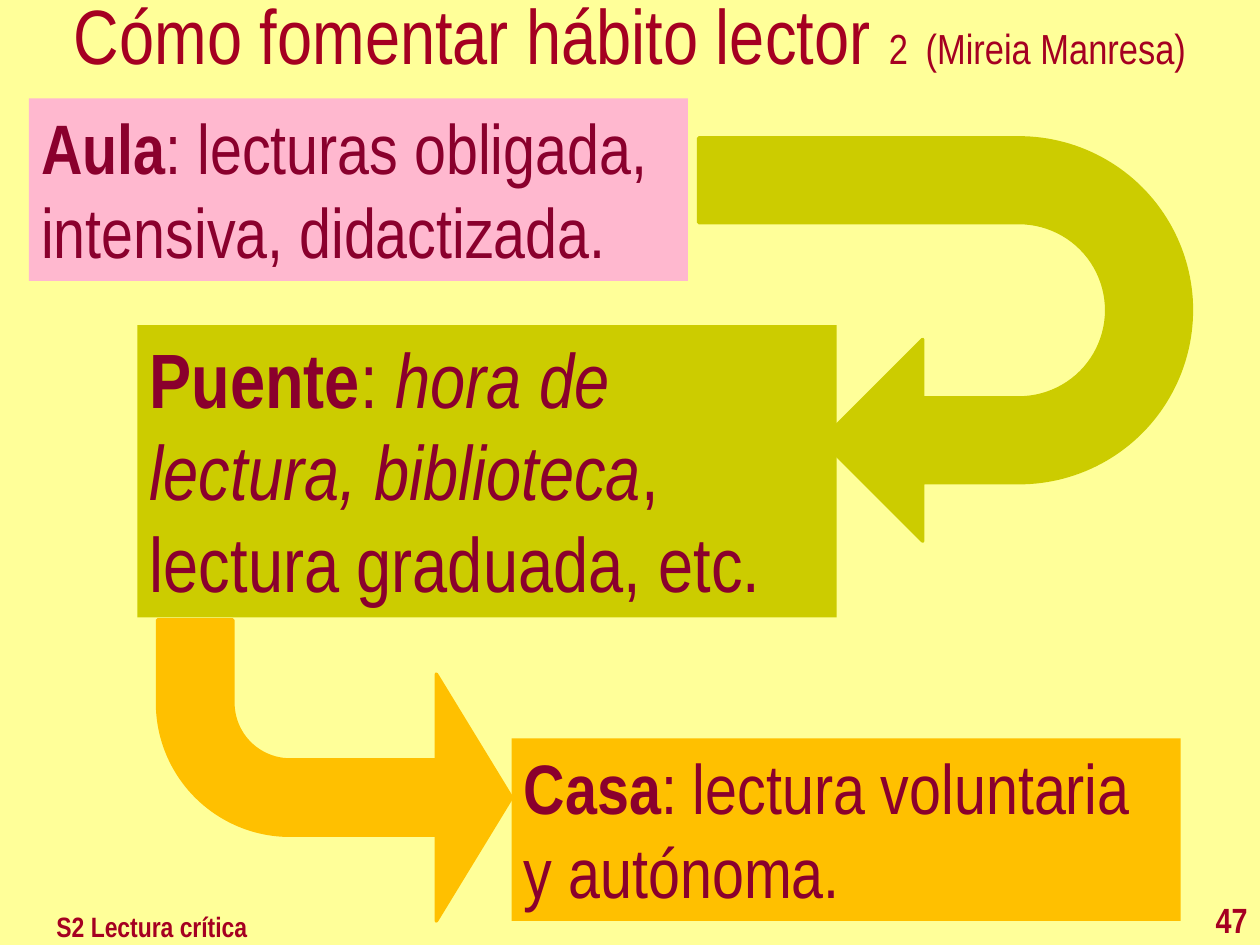
from dataclasses import dataclass

from pptx import Presentation
from pptx import util as u
from pptx.dml.color import RGBColor
from pptx.enum import shapes, text

COLS, ROWS = 100, 75  # grid over a 10 x 7.5 inch slide


@dataclass(frozen=True)
class Theme:
    font: str = "Arial Narrow"
    back: str = "FFFF99"
    head: str = "A50021"
    body: str = "8A002D"
    pink: str = "FFB8CF"
    lime: str = "CCCC00"
    gold: str = "FFC000"
    big: int = 44
    mid: int = 40
    sub: int = 24
    page: int = 20
    foot: int = 16
    edge: int = 2


T = Theme()
KIND = shapes.MSO_SHAPE
SIDE = text.PP_ALIGN


def cell(deck, col, row, wide, high):
    """Turn grid columns and rows into left, top, width, height."""
    dx, dy = deck.slide_width / COLS, deck.slide_height / ROWS
    return [u.Emu(round(n)) for n in (col * dx, row * dy, wide * dx, high * dy)]


def paint(fill, hue):
    fill.solid()
    fill.fore_color.rgb = RGBColor.from_string(hue)


def write(frame, runs, hue, side=SIDE.LEFT, anchor=text.MSO_ANCHOR.TOP,
          fit=text.MSO_AUTO_SIZE.NONE):
    """Fill one paragraph from (words, size, styles) runs."""
    frame.word_wrap = True
    frame.auto_size = fit
    frame.vertical_anchor = anchor
    para = frame.paragraphs[0]
    para.alignment = side
    for words, size, style in runs:
        run = para.add_run()
        run.text = words
        font = run.font
        font.name, font.size = T.font, u.Pt(size)
        font.bold, font.italic = "b" in style, "i" in style
        font.color.rgb = RGBColor.from_string(hue)
    return para


def title(slide, box, runs):
    head = slide.shapes.title
    head.left, head.top, head.width, head.height = box
    para = write(head.text_frame, runs, T.head, SIDE.CENTER,
                 text.MSO_ANCHOR.MIDDLE)
    para.line_spacing = 0.8


def label(slide, box, words, size, side=SIDE.LEFT):
    note = slide.shapes.add_textbox(*box)
    write(note.text_frame, [(words, size, "b")], T.head, side)


def form(slide, kind, box, hue):
    item = slide.shapes.add_shape(kind, *box)
    item.shadow.inherit = False
    paint(item.fill, hue)
    return item


def panel(slide, box, hue, runs):
    item = form(slide, KIND.RECTANGLE, box, hue)
    item.line.fill.background()
    write(item.text_frame, runs, T.body, fit=text.MSO_AUTO_SIZE.SHAPE_TO_FIT_TEXT)


def arrow(slide, kind, box, hue, turn, bends, flip=False):
    item = form(slide, kind, box, hue)
    paint(item.line.fill, hue)
    item.line.width = u.Pt(T.edge)
    item.rotation = turn
    for i, bend in enumerate(bends):
        item.adjustments[i] = bend
    if flip:
        item._element.spPr.find(".//{*}xfrm").set("flipH", "1")


def main():
    deck = Presentation()
    deck.slide_width, deck.slide_height = u.Inches(10), u.Inches(7.5)
    slide = deck.slides.add_slide(deck.slide_layouts[5])
    paint(slide.background.fill, T.back)

    # Title, footer and page number
    title(slide, cell(deck, 0, 0, 100, 6.7), [
        ("Cómo fomentar hábito lector ", T.big, ""), ("2", T.sub, ""),
        (" ", T.big, ""), ("(Mireia Manresa)", T.sub, "")])
    label(slide, cell(deck, 3.5, 71.7, 60.6, 3.3), "S2 Lectura crítica", T.foot)
    label(slide, cell(deck, 92.5, 70.8, 7.5, 4.2), "47", T.page, SIDE.RIGHT)

    # Three reading places
    panel(slide, cell(deck, 2.3, 7.8, 52.3, 14.5), T.pink, [
        ("Aula", T.mid, "b"),
        (": lecturas obligada, intensiva, didactizada.", T.mid, "")])
    panel(slide, cell(deck, 40.6, 58.6, 53.1, 14.5), T.gold, [
        ("Casa", T.mid, "b"),
        (": lectura voluntaria y autónoma.", T.mid, "")])
    panel(slide, cell(deck, 10.9, 25.8, 55.5, 23.2), T.lime, [
        ("Puente", T.big, "b"), (": ", T.big, ""),
        ("hora de lectura, biblioteca", T.big, "i"),
        (", lectura graduada, etc.", T.big, "")])

    # Arrows from one place to the next
    arrow(slide, KIND.U_TURN_ARROW, cell(deck, 59, 7.4, 32, 39.1), T.lime,
          90, (0.21, 0.25, 0.25, 0.44, 0.75))
    arrow(slide, KIND.BENT_ARROW, cell(deck, 12.5, 49.2, 28.1, 23.9), T.gold,
          180, (0.25, 0.41, 0.25, 0.44), flip=True)

    deck.save("out.pptx")


if __name__ == "__main__":
    main()
